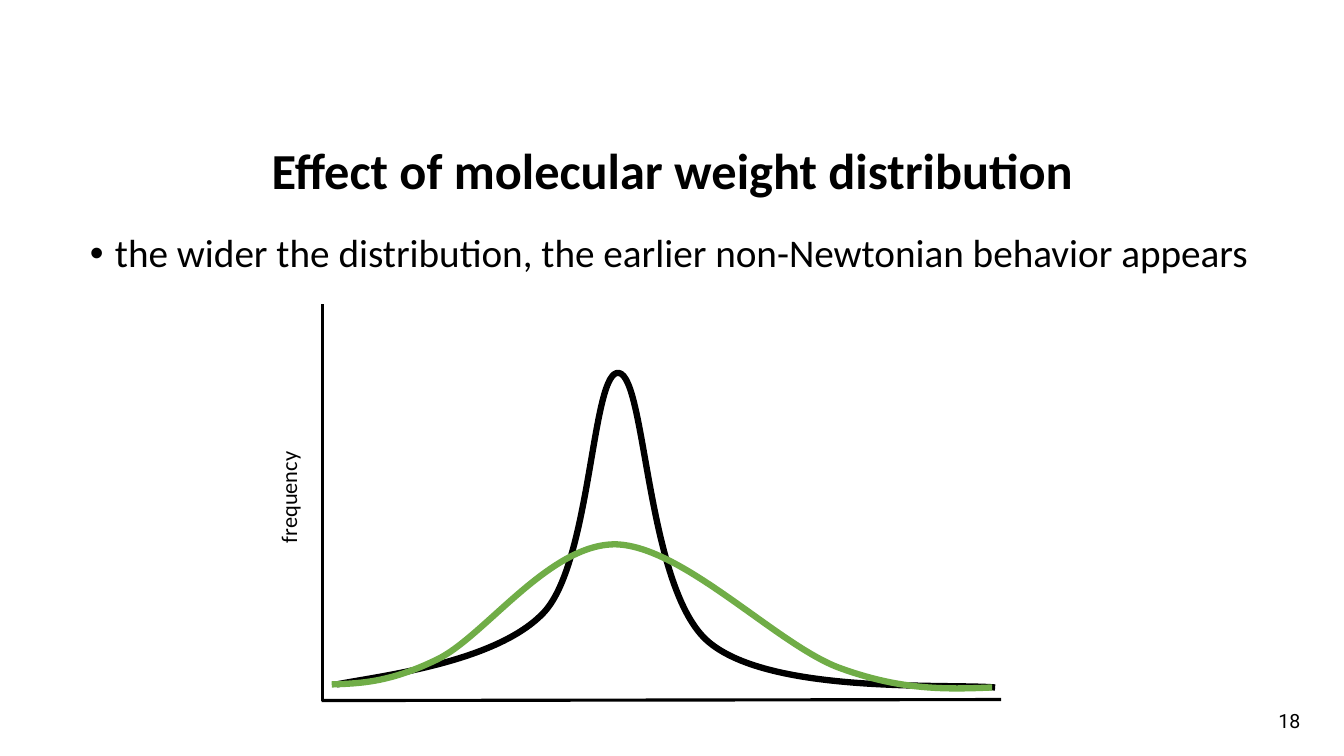
"""Build the slide on the effect of molecular weight distribution."""
from lxml.etree import SubElement
from pptx import Presentation
from pptx.dml.color import RGBColor
from pptx.enum.shapes import MSO_CONNECTOR as Link
from pptx.enum.text import MSO_ANCHOR as Anchor, MSO_AUTO_SIZE as Auto, PP_ALIGN as Align
from pptx.oxml.ns import qn
from pptx.util import Inches, Pt

BLACK = RGBColor(0x00, 0x00, 0x00)
GREEN = RGBColor(0x70, 0xAD, 0x47)


def write(shape, text, size, font="Calibri", bold=False, align=Align.CENTER,
          anchor=Anchor.TOP, space=1.0, wrap=True, fit=Auto.NONE):
    frame = shape.text_frame
    frame.word_wrap = wrap
    frame.auto_size = fit
    frame.vertical_anchor = anchor
    frame.text = text
    para = frame.paragraphs[0]
    para.alignment = align
    para.line_spacing = space
    para.space_before = Pt(0)
    face = para.runs[0].font
    face.name, face.size, face.bold = font, Pt(size), bold
    face.color.rgb = BLACK
    return para


deck = Presentation()
deck.slide_width, deck.slide_height = Inches(13.33), Inches(7.5)
slide = deck.slides.add_slide(deck.slide_layouts[1])
shapes = slide.shapes
title, body = shapes.title, slide.placeholders[1]

for holder, box in ((title, (0.92, 0.99, 11.5, 1.45)), (body, (0.79, 2.27, 11.75, 4.88))):
    holder.left, holder.top, holder.width, holder.height = map(Inches, box)
write(title, "Effect of molecular weight distribution", 36, bold=True,
      anchor=Anchor.MIDDLE, space=0.9)
point = write(body, "the wider the distribution, the earlier non-Newtonian behavior appears",
              28, align=Align.LEFT, space=0.9)
props = point._p.get_or_add_pPr()
props.set("marL", str(Inches(0.25)))
props.set("indent", str(Inches(-0.25)))

graph = shapes.add_group_shape().shapes
for ends in ((3.2, 6.95, 3.2, 3.02), (3.19, 6.95, 9.93, 6.94)):
    axis = graph.add_connector(Link.STRAIGHT, *map(Inches, ends))
    axis.line.color.rgb = BLACK
    axis.line.width = Pt(2.25)
    SubElement(axis._element.spPr, qn("a:effectLst"))

label = graph.add_textbox(*map(Inches, (2.3, 4.75, 1.12, 0.37)))
write(label, "frequency", 16, wrap=False, fit=Auto.SHAPE_TO_FIT_TEXT)
label.rotation = 270

narrow = [(3.34, 6.79), (3.73, 6.71), (4.93, 6.58), (5.4, 6.07), (5.87, 5.55),
          (5.87, 3.65), (6.14, 3.7), (6.41, 3.75), (6.41, 5.85), (7.03, 6.37),
          (7.65, 6.89), (9.39, 6.78), (9.87, 6.82)]
wide = [(3.29, 6.79), (3.58, 6.78), (3.87, 6.77), (4.34, 6.54), (4.81, 6.31),
        (5.45, 5.39), (6.11, 5.4), (6.77, 5.42), (7.69, 6.38), (8.31, 6.62),
        (8.93, 6.85), (9.38, 6.84), (9.84, 6.82)]
for knots, color in ((narrow, BLACK), (wide, GREEN)):
    dots = [(Inches(x), Inches(y)) for x, y in knots]
    pen = shapes.build_freeform(*dots[0])
    pen.add_line_segments(dots[3::3], close=False)
    curve = pen.convert_to_shape()
    for i, part in enumerate(list(curve._element.iter(qn("a:lnTo")))):
        part.clear()
        bend = SubElement(part.getparent(), qn("a:cubicBezTo"))
        part.getparent().replace(part, bend)
        for x, y in dots[3 * i + 1:3 * i + 4]:
            SubElement(bend, qn("a:pt"), x=str(x - curve.left), y=str(y - curve.top))
    curve.shadow.inherit = False
    curve.fill.background()
    curve.line.color.rgb = color
    curve.line.width = Pt(4.5)

number = shapes.add_textbox(*map(Inches, (12.51, 6.95, 0.56, 0.4)))
write(number, "18", 14, font="Roboto", anchor=Anchor.MIDDLE)

deck.save("out.pptx")
